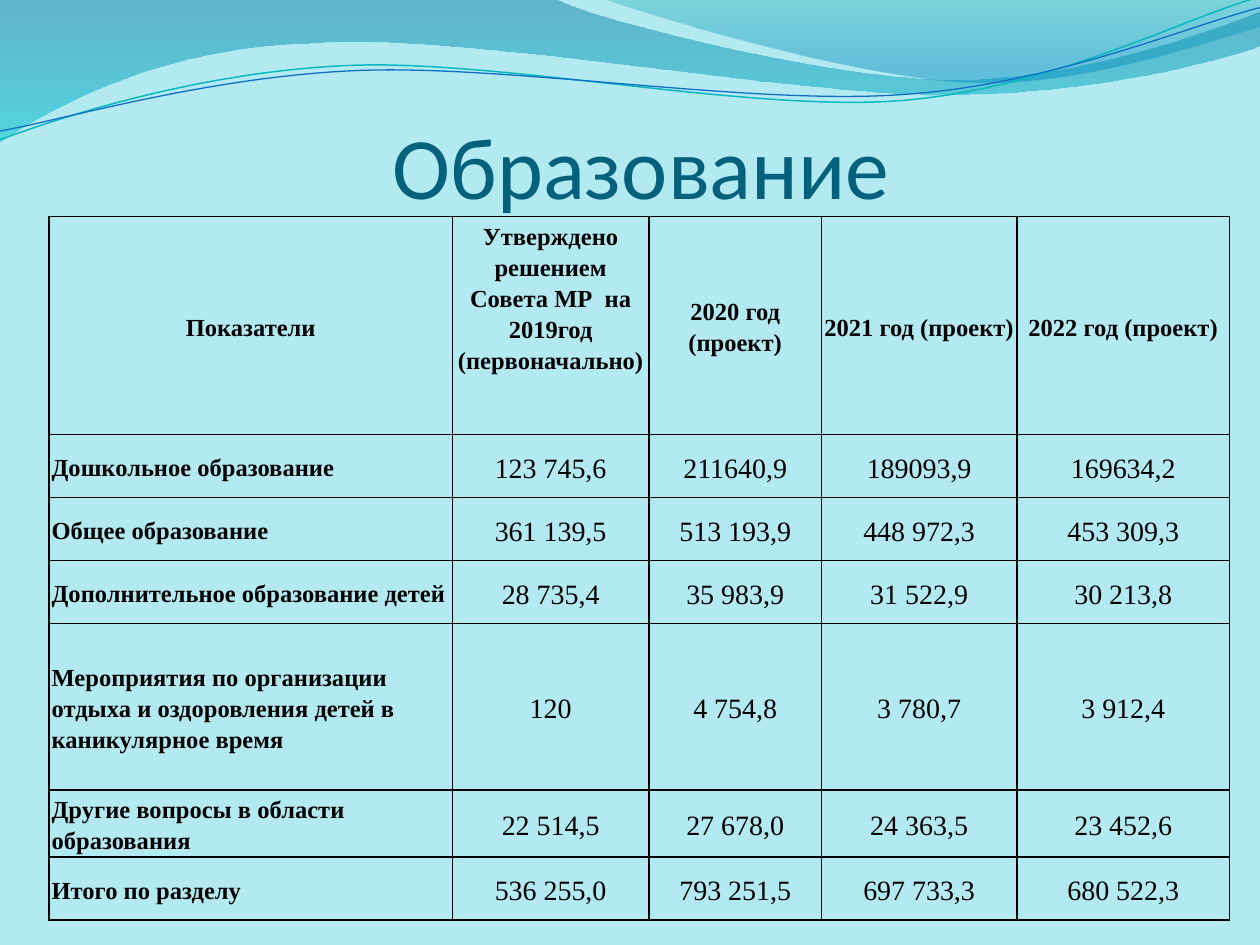
from dataclasses import dataclass
from math import cos, radians, sin

from lxml.etree import SubElement
from pptx import Presentation
from pptx.dml.color import RGBColor as RGB
from pptx.enum.text import MSO_ANCHOR as Anchor, MSO_AUTO_SIZE as Fit, PP_ALIGN as Align
from pptx.oxml import parse_xml
from pptx.oxml.ns import nsdecls, qn
from pptx.util import Pt

PX = 9144  # 100 px to the inch

HUES = {
    "back": "B3EAF2", "title": "04617B", "text": "000000", "rule": "000000",
    "deep": "0074A1", "cyan": "00C6CF", "teal": "00A1A9", "sky": "008BBF",
    "aqua": "0AB8BF", "blue": "0F6FC6",
}


@dataclass
class Stop:
    hue: str
    place: float
    alpha: int


@dataclass
class Wave:
    """An outline in a box: each leg is a line (2 numbers) or a cubic curve (6)."""
    box: tuple
    start: tuple
    legs: list
    stops: tuple = ()
    hue: str = ""
    width: float = 0
    turn: float = 0


@dataclass
class Row:
    label: str
    cells: list
    high: int


WAVES = [
    Wave((-1, -1, 1002, 114), (0, 0), [
        (440, -1),
        (476, 17, 664, 63, 758, 63),
        (853, 63, 958, 26, 1000, 9),
        (1001, 36),
        (983, 44, 870, 76, 746, 75),
        (622, 75, 382, 28, 257, 34),
        (129, 36, 46, 83, -1, 113),
        (0, 0),
    ], stops=(Stop("deep", 0, 45), Stop("cyan", 1, 55))),
    Wave((479, -1, 521, 70), (479, -1), [
        (509, 11, 682, 62, 769, 65),
        (856, 69, 961, 32, 1000, 21),
        (1000, 0),
        (479, -1),
    ], stops=(Stop("teal", 0, 30), Stop("sky", 0.8, 45))),
    Wave((-2, 22, 1002, 71), (0, 111), [
        (48, 93, 158, 57, 277, 52),
        (395, 47, 593, 89, 713, 80),
        (833, 71, 938, 15, 998, -2),
    ], hue="aqua", width=0.85, turn=-2.7),
    Wave((-2, 30, 1003, 58), (0, 104), [
        (47, 96, 164, 61, 283, 56),
        (403, 51, 597, 84, 717, 75),
        (836, 67, 941, 21, 1000, 6),
    ], hue="blue", width=0.75, turn=-2.7),
]

COLS = [320, 156, 137, 155, 169]
ROWS = [
    Row("Показатели", ["Утверждено решением Совета МР  на 2019год (первоначально)",
                       "2020 год (проект)", "2021 год (проект)", "2022 год (проект)"], 173),
    Row("Дошкольное образование", ["123 745,6", "211640,9", "189093,9", "169634,2"], 50),
    Row("Общее образование", ["361 139,5", "513 193,9", "448 972,3", "453 309,3"], 50),
    Row("Дополнительное образование детей",
        ["28 735,4", "35 983,9", "31 522,9", "30 213,8"], 50),
    Row("Мероприятия по организации отдыха и оздоровления детей в каникулярное время",
        ["120", "4 754,8", "3 780,7", "3 912,4"], 132),
    Row("Другие вопросы в области образования",
        ["22 514,5", "27 678,0", "24 363,5", "23 452,6"], 50),
    Row("Итого по разделу", ["536 255,0", "793 251,5", "697 733,3", "680 522,3"], 50),
]


def tint(name: str) -> RGB:
    return RGB.from_string(HUES[name])


def place(wave: Wave, x: float, y: float) -> tuple:
    """Move a slide point into the box of the wave, before its turn."""
    left, top, wide, high = wave.box
    dx, dy = x - left - wide / 2, y - top - high / 2
    c, s = cos(radians(-wave.turn)), sin(radians(-wave.turn))
    return (round((dx * c - dy * s + wide / 2) * PX),
            round((dx * s + dy * c + high / 2) * PX))


def add_leg(outline, tag: str, wave: Wave, leg: tuple) -> None:
    node = SubElement(outline, qn(tag))
    for spot in zip(leg[::2], leg[1::2]):
        x, y = place(wave, *spot)
        SubElement(node, qn("a:pt"), x=str(x), y=str(y))


def add_outline(slide, wave: Wave):
    """Add a freeform the size of the box, then give it true curves."""
    left, top, wide, high = wave.box
    right, base = left + wide, top + high
    pen = slide.shapes.build_freeform(left, top, scale=PX)
    pen.add_line_segments([(right, top), (right, base), (left, base)])
    shape = pen.convert_to_shape()
    outline = next(shape._element.iter(qn("a:path")))
    for node in list(outline):
        outline.remove(node)
    outline.set("w", str(wide * PX))
    outline.set("h", str(high * PX))
    add_leg(outline, "a:moveTo", wave, wave.start)
    for leg in wave.legs:
        add_leg(outline, "a:lnTo" if len(leg) == 2 else "a:cubicBezTo", wave, leg)
    if wave.stops:
        SubElement(outline, qn("a:close"))
    shape.rotation = wave.turn
    return shape


def draw_wave(slide, wave: Wave) -> None:
    shape = add_outline(slide, wave)
    shape.shadow.inherit = False
    if not wave.stops:
        shape.fill.background()
        shape.line.color.rgb = tint(wave.hue)
        shape.line.width = Pt(wave.width)
        return
    shape.line.fill.background()
    shape.fill.gradient()
    shape.fill.gradient_angle = 270
    for mark, stop in zip(shape.fill.gradient_stops, wave.stops):
        mark.color.rgb = tint(stop.hue)
        mark.position = stop.place
    for node, stop in zip(shape._element.spPr.iter(qn("a:srgbClr")), wave.stops):
        SubElement(node, qn("a:alpha"), val=str(stop.alpha * 1000))


def draw_title(slide, text: str) -> None:
    title = slide.shapes.title
    title.left, title.top, title.width, title.height = (
        n * PX for n in (55, 47, 908, 125))
    frame = title.text_frame
    frame.text = text
    frame.auto_size = Fit.NONE
    frame.vertical_anchor = Anchor.BOTTOM
    frame.margin_left = frame.margin_right = frame.margin_bottom = 0
    frame.margin_top = 5 * PX
    para = frame.paragraphs[0]
    para.alignment = Align.CENTER
    font = para.runs[0].font
    font.size, font.name = Pt(50), "Calibri"
    font.color.rgb = tint("title")
    slide.shapes._spTree.append(title._element)  # in front of the waves


def frame_cell(cell) -> None:
    """Clear the fill and rule all four sides."""
    cell.fill.background()
    props = cell._tc.get_or_add_tcPr()
    for spot, side in enumerate("LRTB"):
        props.insert(spot, parse_xml(
            f'<a:ln{side} {nsdecls("a")} w="{Pt(1)}"><a:solidFill>'
            f'<a:srgbClr val="{HUES["rule"]}"/></a:solidFill></a:ln{side}>'))


def fill_cell(cell, text: str, head: bool, label: bool) -> None:
    cell.text = text
    cell.margin_left = cell.margin_right = cell.margin_top = cell.margin_bottom = 2 * PX
    cell.vertical_anchor = Anchor.MIDDLE
    para = cell.text_frame.paragraphs[0]
    para.alignment = Align.LEFT if label and not head else Align.CENTER
    para.line_spacing = 1.15
    font = para.runs[0].font
    font.name = "Times New Roman"
    font.bold = head or label
    font.size = Pt(14 if font.bold else 16)
    font.color.rgb = tint("text")
    frame_cell(cell)


def draw_table(slide) -> None:
    sizes = (39, 172, sum(COLS), sum(row.high for row in ROWS))
    table = slide.shapes.add_table(len(ROWS), len(COLS), *(n * PX for n in sizes)).table
    table.first_row = table.horz_banding = False
    for col, wide in zip(table.columns, COLS):
        col.width = wide * PX
    for r, row in enumerate(ROWS):
        table.rows[r].height = row.high * PX
        for c, text in enumerate([row.label, *row.cells]):
            fill_cell(table.cell(r, c), text, r == 0, c == 0)
    table.cell(0, 1).vertical_anchor = Anchor.TOP


def main() -> None:
    deck = Presentation()
    deck.slide_width, deck.slide_height = 1000 * PX, 750 * PX
    slide = deck.slides.add_slide(deck.slide_layouts[5])
    slide.background.fill.solid()
    slide.background.fill.fore_color.rgb = tint("back")
    for wave in WAVES:
        draw_wave(slide, wave)
    draw_title(slide, "Образование")
    draw_table(slide)
    deck.save("out.pptx")


if __name__ == "__main__":
    main()
